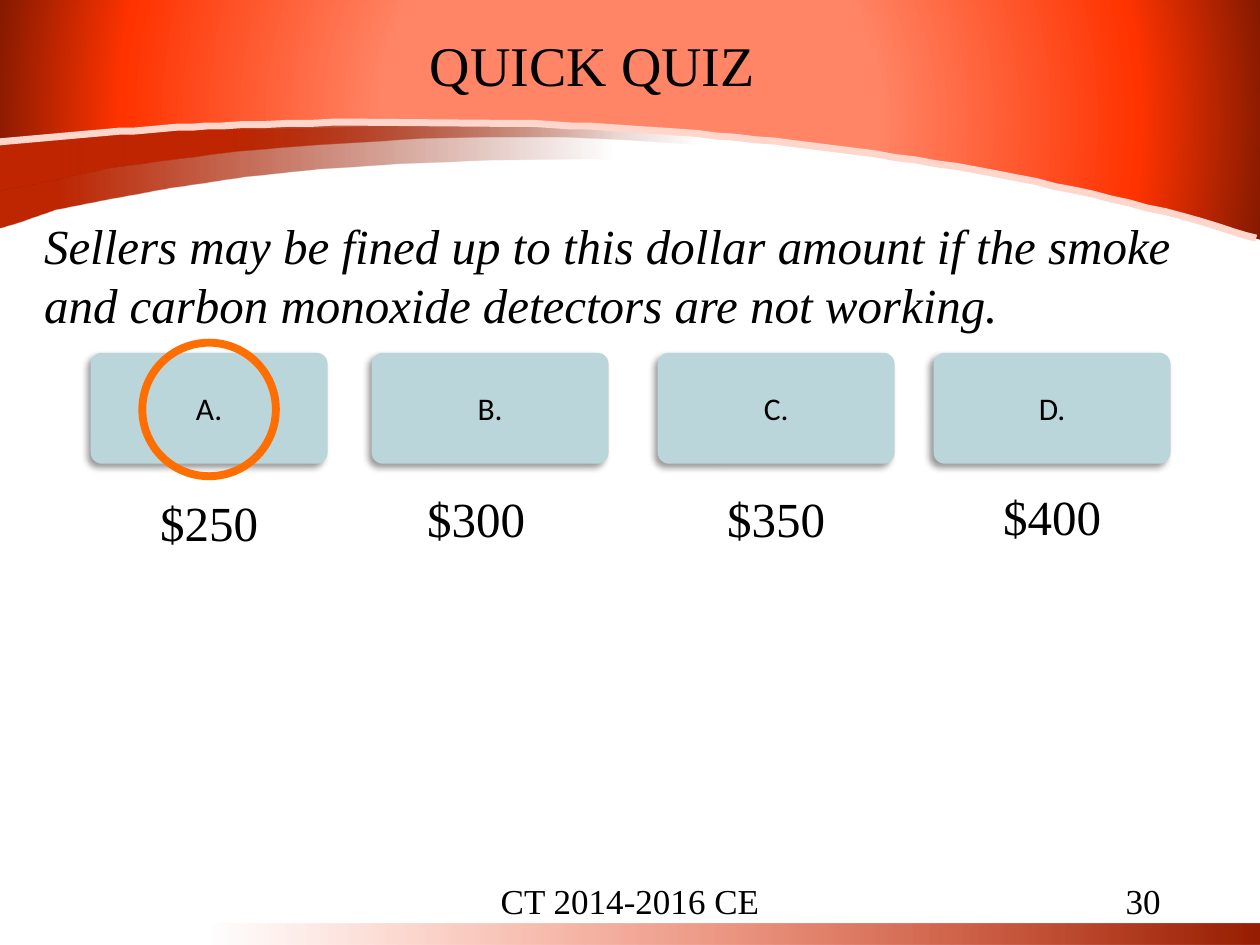
from lxml.etree import SubElement
from pptx import Presentation
from pptx.dml.color import RGBColor
from pptx.enum.shapes import MSO_SHAPE
from pptx.enum.text import MSO_ANCHOR, MSO_AUTO_SIZE, PP_ALIGN
from pptx.oxml.ns import qn
from pptx.util import Inches, Pt

COLORS = {
    "text": "000000", "card": "BBD6DB", "ring": "FF6E01", "cream": "FFD6CC",
    "salmon": "FF8566", "red": "FF3300", "brick": "D72B00", "rust": "BF2600",
    "maroon": "971E00", "dark": "801900",
}
SERIF = "Times New Roman"

# Outlines in hundredths of an inch; six numbers make a Bézier segment.
LOWER_SWOOSH = [
    (-2, 181), (15, 176), (44, 166), (79, 159), (134, 149), (195, 140),
    (253, 134), (315, 130), (390, 127), (471, 126), (507, 128), (507, 94), (-3, 109),
]
UPPER_SWOOSH = [
    (-2, 151), (35, 144), (88, 133), (126, 128), (189, 120), (253, 115), (336, 110),
    (384, 109), (448, 109), (510, 112), (550, 115), (554, 97), (453, 84), (-2, 91),
]
HEADER_BAND = [
    (-2, 112), (63, 107), (128, 102), (209, 98), (284, 97), (351, 97), (437, 99),
    (514, 103), (610, 112), (699, 124), (782, 138), (855, 152), (910, 165),
    (972, 181), (1003, 191), (1001, 0), (-3, -1),
]
HEADER_EDGE = [
    (-5, 113), (85, 105), (115, 103, 142, 101, 176, 100), (210, 98, 290, 97, 290, 97),
    (410, 98), (449, 99, 485, 101, 525, 104), (564, 107, 604, 111, 646, 116),
    (687, 121, 733, 128, 775, 135), (817, 143, 859, 152, 896, 161),
    (933, 170, 980, 184, 997, 189),
]


def rgb(name):
    return RGBColor.from_string(COLORS[name])


def flatten(outline, steps=8):
    """Turn the Bézier segments of an outline into short straight ones."""
    points = [outline[0]]
    for segment in outline[1:]:
        if len(segment) == 2:
            points.append(segment)
            continue
        controls = [points[-1], segment[:2], segment[2:4], segment[4:]]
        for step in range(1, steps + 1):
            t = step / steps
            weights = ((1 - t) ** 3, 3 * t * (1 - t) ** 2, 3 * t * t * (1 - t), t ** 3)
            points.append(tuple(
                sum(weight * point[axis] for weight, point in zip(weights, controls))
                for axis in (0, 1)))
    return points


def add_outline(slide, outline, close=True):
    points = flatten(outline)
    builder = slide.shapes.build_freeform(*points[0], scale=Inches(1) / 100)
    builder.add_line_segments(points[1:], close=close)
    shape = builder.convert_to_shape()
    shape.shadow.inherit = False
    return shape


def fill_gradient(shape, stops, angle=0, radial=False):
    """Fill with (position %, colour, opacity %) stops and no outline."""
    shape.line.fill.background()
    shape.fill.gradient()
    gradient = shape._element.spPr.find(qn("a:gradFill"))
    for child in list(gradient):
        gradient.remove(child)
    stop_list = SubElement(gradient, qn("a:gsLst"))
    for position, color, opacity in stops:
        stop = SubElement(stop_list, qn("a:gs"), pos=str(position * 1000))
        value = SubElement(stop, qn("a:srgbClr"), val=COLORS[color])
        SubElement(value, qn("a:alpha"), val=str(opacity * 1000))
    if radial:
        center = SubElement(gradient, qn("a:path"), {"path": "circle"})
        SubElement(center, qn("a:fillToRect"), dict.fromkeys("ltrb", "50000"))
    else:
        SubElement(gradient, qn("a:lin"), ang=str(angle * 60000), scaled="0")


def add_decoration(slide):
    bar = slide.shapes.add_shape(
        MSO_SHAPE.RECTANGLE, Inches(1.67), Inches(7.33), Inches(8.33), Inches(0.17))
    bar.shadow.inherit = False
    fill_gradient(bar, [(0, "maroon", 100), (50, "brick", 50), (100, "red", 0)], 180)
    fill_gradient(add_outline(slide, LOWER_SWOOSH), [(9, "rust", 100), (96, "dark", 0)])
    fill_gradient(add_outline(slide, UPPER_SWOOSH), [(33, "rust", 100), (100, "dark", 0)])
    fill_gradient(add_outline(slide, HEADER_BAND),
                  [(38, "salmon", 100), (79, "red", 100), (100, "dark", 100)], radial=True)
    edge = add_outline(slide, HEADER_EDGE, close=False)
    edge.fill.background()
    edge.line.color.rgb = rgb("cream")
    edge.line.width = Pt(4)


def write(shape, text, size, font=SERIF, align=PP_ALIGN.LEFT, anchor=MSO_ANCHOR.TOP,
          italic=False, wrap=True):
    frame = shape.text_frame
    frame.text = text
    frame.word_wrap = wrap
    frame.auto_size = MSO_AUTO_SIZE.NONE
    frame.vertical_anchor = anchor
    paragraph = frame.paragraphs[0]
    paragraph.alignment = align
    paragraph.space_before = Pt(0)
    paragraph.font.name = font
    paragraph.font.size = Pt(size)
    paragraph.font.italic = italic
    paragraph.font.color.rgb = rgb("text")


def place(slide, placeholder, left, top, width, height):
    """Move a placeholder into position, in front of the decoration."""
    placeholder.left, placeholder.top = Inches(left), Inches(top)
    placeholder.width, placeholder.height = Inches(width), Inches(height)
    slide.shapes._spTree.append(placeholder._element)


def add_text(slide, left, top, width, height, text, size, **style):
    box = slide.shapes.add_textbox(Inches(left), Inches(top), Inches(width), Inches(height))
    write(box, text, size, **style)


def add_card(slide, left, letter):
    card = slide.shapes.add_shape(
        MSO_SHAPE.ROUNDED_RECTANGLE, Inches(left), Inches(2.8), Inches(1.88), Inches(0.88))
    card.adjustments[0] = 0.1
    card.fill.solid()
    card.fill.fore_color.rgb = rgb("card")
    card.line.fill.background()
    card.shadow.inherit = False
    effects = card._element.spPr.find(qn("a:effectLst"))
    shadow = SubElement(effects, qn("a:outerShdw"), blurRad=str(Pt(4)), dist=str(Pt(3)),
                        dir=str(135 * 60000), algn="tr", rotWithShape="0")
    color = SubElement(shadow, qn("a:srgbClr"), val=COLORS["text"])
    SubElement(color, qn("a:alpha"), val="40000")
    write(card, letter, 18, font="Calibri", align=PP_ALIGN.CENTER, anchor=MSO_ANCHOR.MIDDLE)


def add_answer_ring(slide):
    ring = slide.shapes.add_shape(
        MSO_SHAPE.OVAL, Inches(1.13), Inches(2.72), Inches(1.06), Inches(1.06))
    ring.shadow.inherit = False
    ring.fill.background()
    ring.line.color.rgb = rgb("ring")
    ring.line.width = Pt(4.5)


def main():
    presentation = Presentation()
    presentation.slide_width, presentation.slide_height = Inches(10), Inches(7.5)
    slide = presentation.slides.add_slide(presentation.slide_layouts[1])
    title, question = slide.placeholders
    add_decoration(slide)

    answers = [("A.", "$250", 0.72, 3.86), ("B.", "$300\t", 2.95, 3.83),
               ("C.", "$350", 5.22, 3.83), ("D.", "$400", 7.41, 3.81)]
    for letter, _, left, _ in answers:
        add_card(slide, left, letter)
    add_answer_ring(slide)
    for _, amount, left, top in answers:
        add_text(slide, left, top, 1.88, 1.38, amount, 28, align=PP_ALIGN.CENTER)

    place(slide, question, 0.25, 1.66, 9.42, 1.04)
    write(question, "Sellers may be fined up to this dollar amount if the smoke "
          "and carbon monoxide detectors are not working.", 28, italic=True)
    properties = question.text_frame.paragraphs[0]._p.get_or_add_pPr()
    properties.set("marL", "0")
    properties.set("indent", "0")
    bullet_none = properties.makeelement(qn("a:buNone"))
    properties.find(qn("a:spcBef")).addnext(bullet_none)

    add_text(slide, 3.31, 6.95, 3.38, 0.4, "CT 2014-2016 CE", 20,
             align=PP_ALIGN.CENTER, anchor=MSO_ANCHOR.MIDDLE)
    add_text(slide, 7.06, 6.95, 2.25, 0.4, "30", 20,
             align=PP_ALIGN.RIGHT, anchor=MSO_ANCHOR.MIDDLE)
    place(slide, title, 3.31, 0.19, 2.93, 0.64)
    write(title, "QUICK QUIZ", 32, wrap=False)
    presentation.save("out.pptx")


if __name__ == "__main__":
    main()
